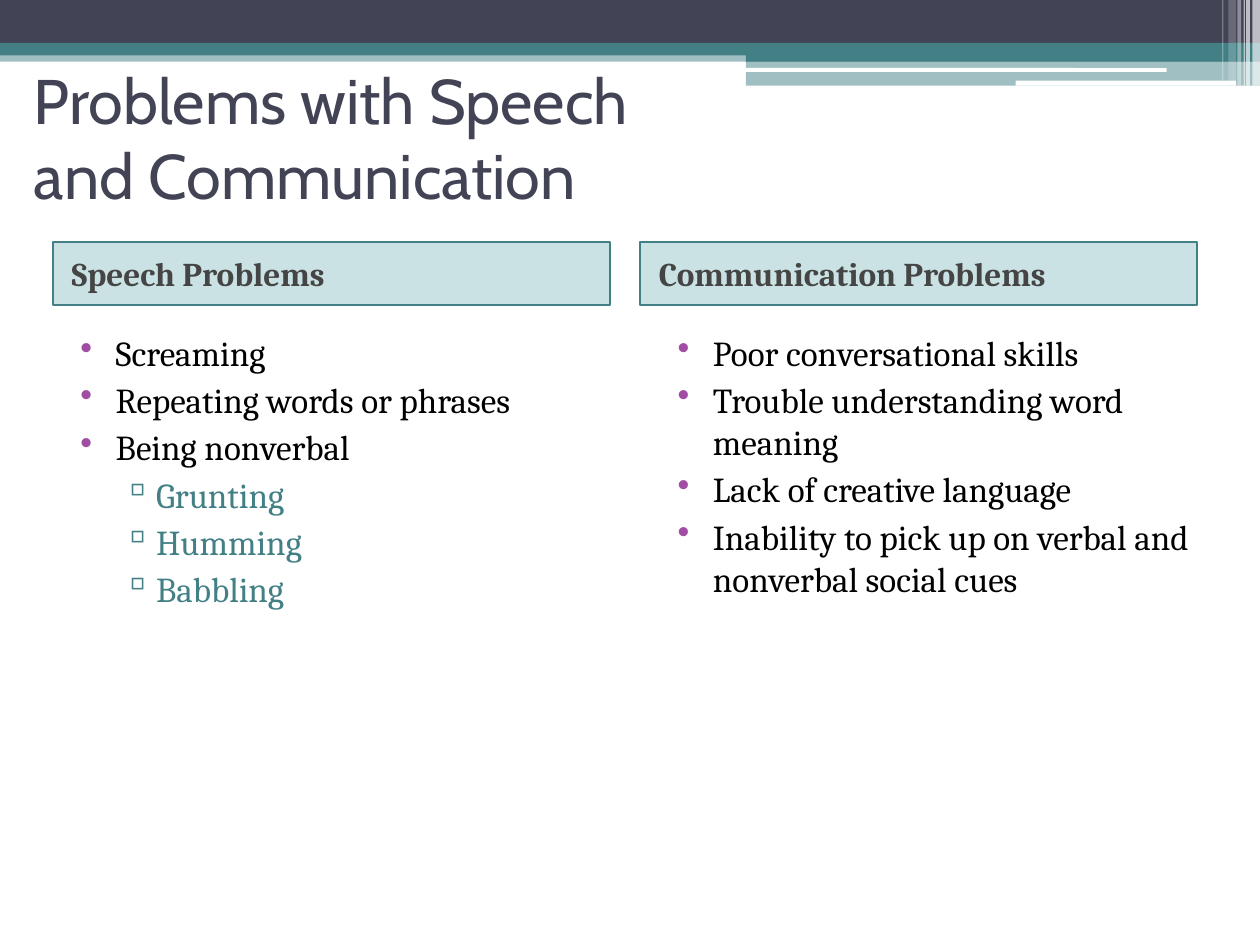
from lxml import etree
from pptx import Presentation
from pptx.dml.color import RGBColor
from pptx.enum.shapes import MSO_SHAPE
from pptx.enum.text import MSO_ANCHOR
from pptx.oxml.ns import qn
from pptx.util import Inches, Pt

RECT, ROUND = MSO_SHAPE.RECTANGLE, MSO_SHAPE.ROUNDED_RECTANGLE
TOP, MIDDLE = MSO_ANCHOR.TOP, MSO_ANCHOR.MIDDLE

# Content: (level, text) under each heading
TITLE = "Problems with Speech and Communication"
COLUMNS = [
    ("Speech Problems", [
        (0, "Screaming"),
        (0, "Repeating words or phrases"),
        (0, "Being nonverbal"),
        (1, "Grunting"),
        (1, "Humming"),
        (1, "Babbling"),
    ]),
    ("Communication Problems", [
        (0, "Poor conversational skills"),
        (0, "Trouble understanding word meaning"),
        (0, "Lack of creative language"),
        (0, "Inability to pick up on verbal and nonverbal social cues"),
    ]),
]

THEME = {
    "navy": "424456", "teal": "438086", "aqua": "328E97", "white": "FFFFFF",
    "gray": "454545", "black": "000000", "plum": "A04DA3",
    "head": "Cabin", "body": "Cambria",
    "title": 36, "label": 19, "text": 20,
}
# Per level: text colour, bullet colour, bullet, left margin, indent
LEVELS = [
    ("black", "plum", "•", 0.4, -0.28),
    ("teal", "teal", "▫", 0.72, -0.27),
]

# Bands: left, top, width, height, colour, opacity, form
BANDS = [
    (0, 0.4, 10, 0.09, "teal", 50, RECT),
    (0, 0, 10, 0.34, "navy", 100, RECT),
    (0, 0.34, 10, 0.1, "teal", 100, RECT),
    (5.92, 0.39, 4.08, 0.1, "teal", 100, RECT),
    (5.92, 0.48, 4.08, 0.2, "teal", 50, RECT),
    (5.91, 0.54, 3.35, 0.03, "white", 100, ROUND),
    (8.06, 0.64, 1.75, 0.04, "white", 100, ROUND),
]
# Pale stripes at the right edge: left, width, height, opacity
STRIPES = [
    (9.94, 0.06, 0.68, 65), (9.89, 0.03, 0.68, 65), (9.87, 0.01, 0.68, 60),
    (9.82, 0.03, 0.68, 40), (9.75, 0.06, 0.64, 20), (9.7, 0.01, 0.64, 30),
]

# Column grid
WIDTH, LABEL_TOP, BODY_TOP = 4.42, 1.92, 2.58
LABEL_LEFT = (0.42, 5.08)
BODY_LEFT = (0.42, 5.16)


def rgb(name):
    return RGBColor.from_string(THEME[name])


def add_box(slide, left, top, width, height, color, alpha=100, form=RECT, line=None):
    box = slide.shapes.add_shape(
        form, Inches(left), Inches(top), Inches(width), Inches(height))
    box.shadow.inherit = False
    box.fill.solid()
    box.fill.fore_color.rgb = rgb(color)
    if alpha < 100:
        tint = box.fill._xPr.find(qn("a:solidFill"))[0]
        etree.SubElement(tint, qn("a:alpha"), val=str(alpha * 1000))
    if line:
        box.line.color.rgb = rgb(line)
        box.line.width = Pt(1)
    else:
        box.line.fill.background()
    return box


def add_frame(slide, left, top, width, height):
    return slide.shapes.add_textbox(
        Inches(left), Inches(top), Inches(width), Inches(height))


def add_text(shape, text, *, size, color, font="body", bold=False, anchor=TOP,
             level=0, margin=0, indent=0, before=0, mark=None, tint=None):
    """Write one paragraph, filling the empty first one if there is one."""
    frame = shape.text_frame
    frame.word_wrap = True
    frame.vertical_anchor = anchor
    para = frame.paragraphs[0]
    if para.runs:
        para = frame.add_paragraph()
    para.level = level
    para.space_before = Pt(before)
    props = para._p.get_or_add_pPr()
    props.set("algn", "l")
    props.set("marL", str(Inches(margin)))
    props.set("indent", str(Inches(indent)))
    if mark:
        hue = etree.SubElement(props, qn("a:buClr"))
        etree.SubElement(hue, qn("a:srgbClr"), val=THEME[tint])
        etree.SubElement(props, qn("a:buChar"), char=mark)
    run = para.add_run()
    run.text = text
    run.font.name = THEME[font]
    run.font.size = Pt(THEME[size])
    run.font.bold = bold
    run.font.color.rgb = rgb(color)


def main():
    deck = Presentation()
    deck.slide_width, deck.slide_height = Inches(10), Inches(7.5)
    slide = deck.slides.add_slide(deck.slide_layouts[6])

    # Top decoration
    for band in BANDS:
        add_box(slide, *band)
    for left, width, height, alpha in STRIPES:
        add_box(slide, left, 0, width, height, "white", alpha)

    # Title
    title = add_frame(slide, 0.17, 0.5, 5.75, 1.17)
    add_text(title, TITLE, size="title", color="navy", font="head", anchor=MIDDLE)

    # Headings and lists
    for (name, items), left, inset in zip(COLUMNS, LABEL_LEFT, BODY_LEFT):
        label = add_box(slide, left, LABEL_TOP, WIDTH, 0.5, "aqua", 25, line="teal")
        add_text(label, name, size="label", color="gray", bold=True,
                 anchor=MIDDLE, margin=0.05, before=3)
        body = add_frame(slide, inset, BODY_TOP, WIDTH, 4.63)
        for level, text in items:
            color, tint, mark, margin, indent = LEVELS[level]
            add_text(body, text, size="text", color=color, level=level, before=3,
                     margin=margin, indent=indent, mark=mark, tint=tint)

    deck.save("out.pptx")


if __name__ == "__main__":
    main()
